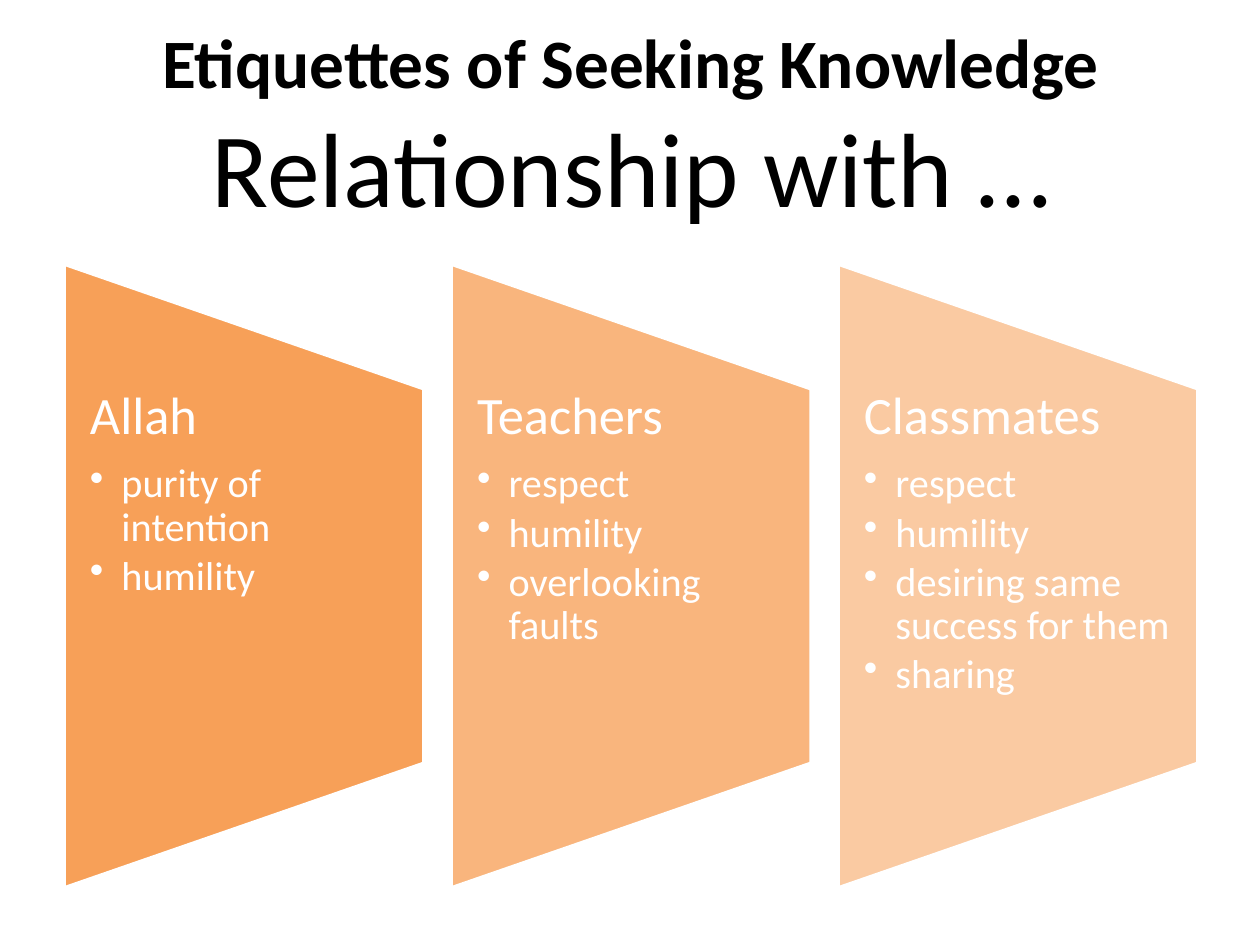
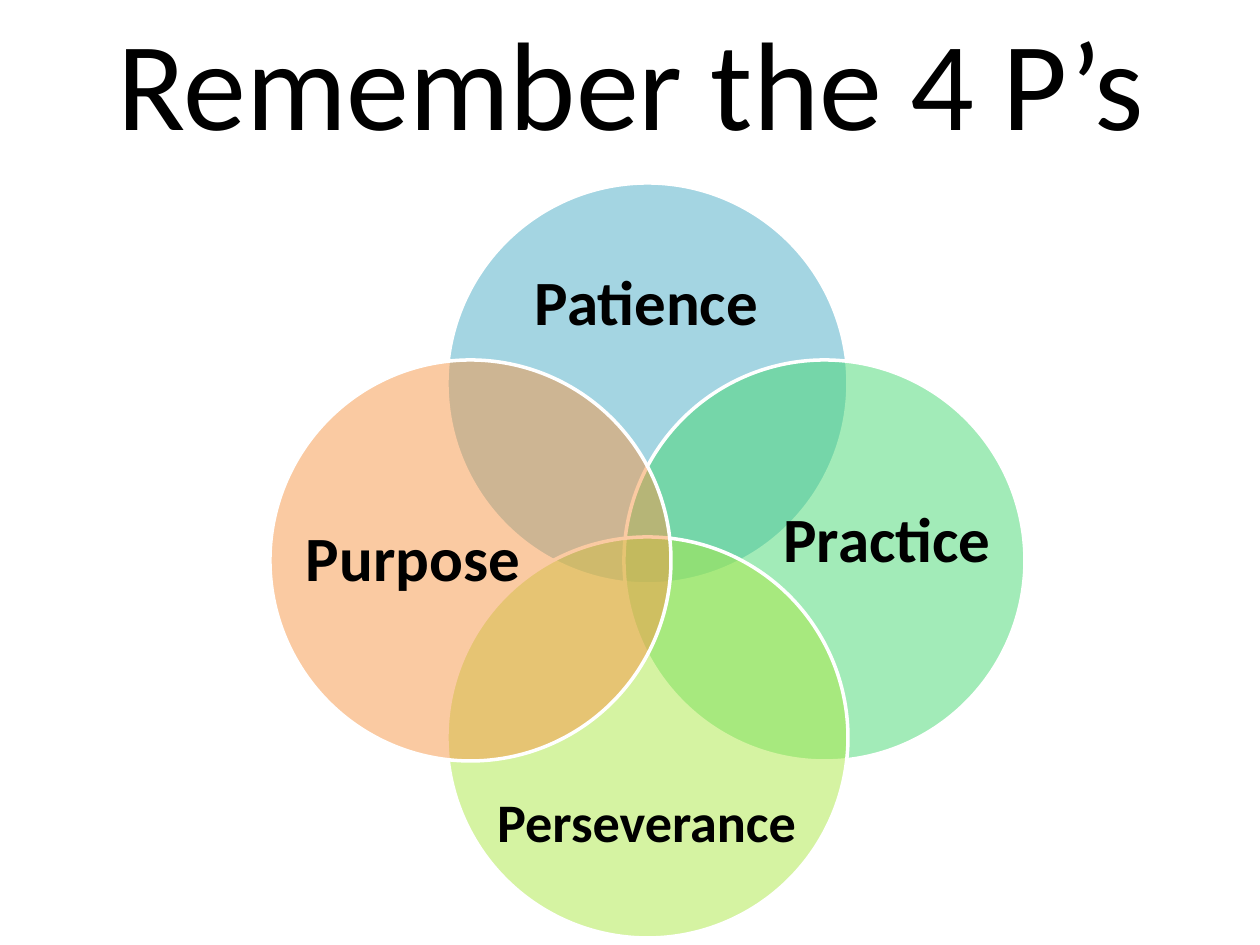
"""Build two slides: three relationship panels and a four-circle diagram."""
import pptx
import pptx.util
import pptx.dml.color
import pptx.enum.shapes
import pptx.enum.text
import pptx.oxml.ns
import lxml.etree

PX = 914400 / 126
FONT = "Calibri"
HUES = {"black": "000000", "white": "FFFFFF", "orange": "F79646",
        "blue": "4BACC6", "green": "47D872", "lime": "ACE946"}

PANELS = [
    ("Allah", 90, ["purity of intention", "humility"]),
    ("Teachers", 70, ["respect", "humility", "overlooking faults"]),
    ("Classmates", 50, ["respect", "humility", "desiring same success for them", "sharing"]),
]
LEFT, STEP, WIDE, TALL, MID = 64, 387, 360, 624, 576
BODY = 374

# name, hue, column, row, label box, label size
CIRCLES = [
    ("Patience", "blue", 1, 0, (493, 237, 307, 127), 36),
    ("Practice", "green", 2, 1, (769, 493, 236, 89), 36),
    ("Perseverance", "lime", 1, 2, (493, 757, 307, 127), 31),
    ("Purpose", "orange", 0, 1, (292, 512, 242, 89), 36),
]
RING, SHIFT, RING_X, RING_Y = 401, 177, 270, 183

SHAPE = pptx.enum.shapes.MSO_SHAPE
ANCHOR = pptx.enum.text.MSO_ANCHOR
CENTER = pptx.enum.text.PP_ALIGN.CENTER


def emu(*vals):
    return [round(val * PX) for val in vals]


def color(name):
    return pptx.dml.color.RGBColor.from_string(HUES[name])


def style(font, size, hue="black", bold=False):
    font.name, font.size, font.bold = FONT, pptx.util.Pt(size), bold
    font.color.rgb = color(hue)


def add_text(slide, box, side=0, anchor=ANCHOR.MIDDLE):
    frame = slide.shapes.add_textbox(*emu(*box)).text_frame
    frame.word_wrap, frame.vertical_anchor = True, anchor
    frame.margin_left = frame.margin_right = emu(side)[0]
    frame.margin_top = frame.margin_bottom = 0
    return frame


def add_title(slide, top, lines):
    para = add_text(slide, (64, top, 1134, 158)).paragraphs[0]
    para.alignment = CENTER
    for num, (text, size, bold) in enumerate(lines):
        if num:
            para.add_line_break()
        run = para.add_run()
        run.text = text
        style(run.font, size, bold=bold)


def add_shape(slide, kind, box, hue, alpha):
    shape = slide.shapes.add_shape(kind, *emu(*box))
    shape.shadow.inherit = False
    shape.fill.solid()
    shape.fill.fore_color.rgb = color(hue)
    tag = shape.fill._xPr.find(".//" + pptx.oxml.ns.qn("a:srgbClr"))
    lxml.etree.SubElement(tag, pptx.oxml.ns.qn("a:alpha"), val=str(alpha * 1000))
    shape.line.color.rgb = color("white")
    shape.line.width = pptx.util.Pt(2)
    return shape


def add_bullet(para):
    props = para._p.get_or_add_pPr()
    indent = pptx.util.Inches(0.25)
    props.set("marL", str(indent))
    props.set("indent", str(-indent))
    lxml.etree.SubElement(props, pptx.oxml.ns.qn("a:buChar"), char="•")


def add_panel(slide, num, head, alpha, points):
    left = LEFT + num * STEP
    box = (left + (WIDE - TALL) / 2, MID - WIDE / 2, TALL, WIDE)
    shape = add_shape(slide, SHAPE.FLOWCHART_MANUAL_OPERATION, box, "orange", alpha)
    shape.rotation = 270
    frame = add_text(slide, (left, MID - BODY / 2, WIDE, BODY), 26, ANCHOR.TOP)
    for row, text in enumerate([head] + points):
        para = frame.add_paragraph() if row else frame.paragraphs[0]
        para.text = text
        para.line_spacing = 0.9
        para.space_after = pptx.util.Pt(3.2 if row else 10)
        if row:
            add_bullet(para)
        style(para.font, 23 if row else 30, "white")


def add_label(slide, text, box, size):
    para = add_text(slide, box).paragraphs[0]
    para.text, para.alignment = text, CENTER
    style(para.font, size, bold=True)


def main():
    deck = pptx.Presentation()
    deck.slide_width, deck.slide_height = emu(1260, 945)
    first, second = [deck.slides.add_slide(deck.slide_layouts[6]) for _ in range(2)]

    add_title(first, 45, [("Etiquettes of Seeking Knowledge", 39.6, True),
                          ("Relationship with …", 60.3, False)])
    for num, panel in enumerate(PANELS):
        add_panel(first, num, *panel)

    add_title(second, 1, [("Remember the 4 P’s", 72, False)])
    for _, hue, col, row, _, _ in CIRCLES:
        box = (RING_X + col * SHIFT, RING_Y + row * SHIFT, RING, RING)
        add_shape(second, SHAPE.OVAL, box, hue, 50)
    for name, _, _, _, box, size in CIRCLES:
        add_label(second, name, box, size)

    deck.save("out.pptx")


if __name__ == "__main__":
    main()
